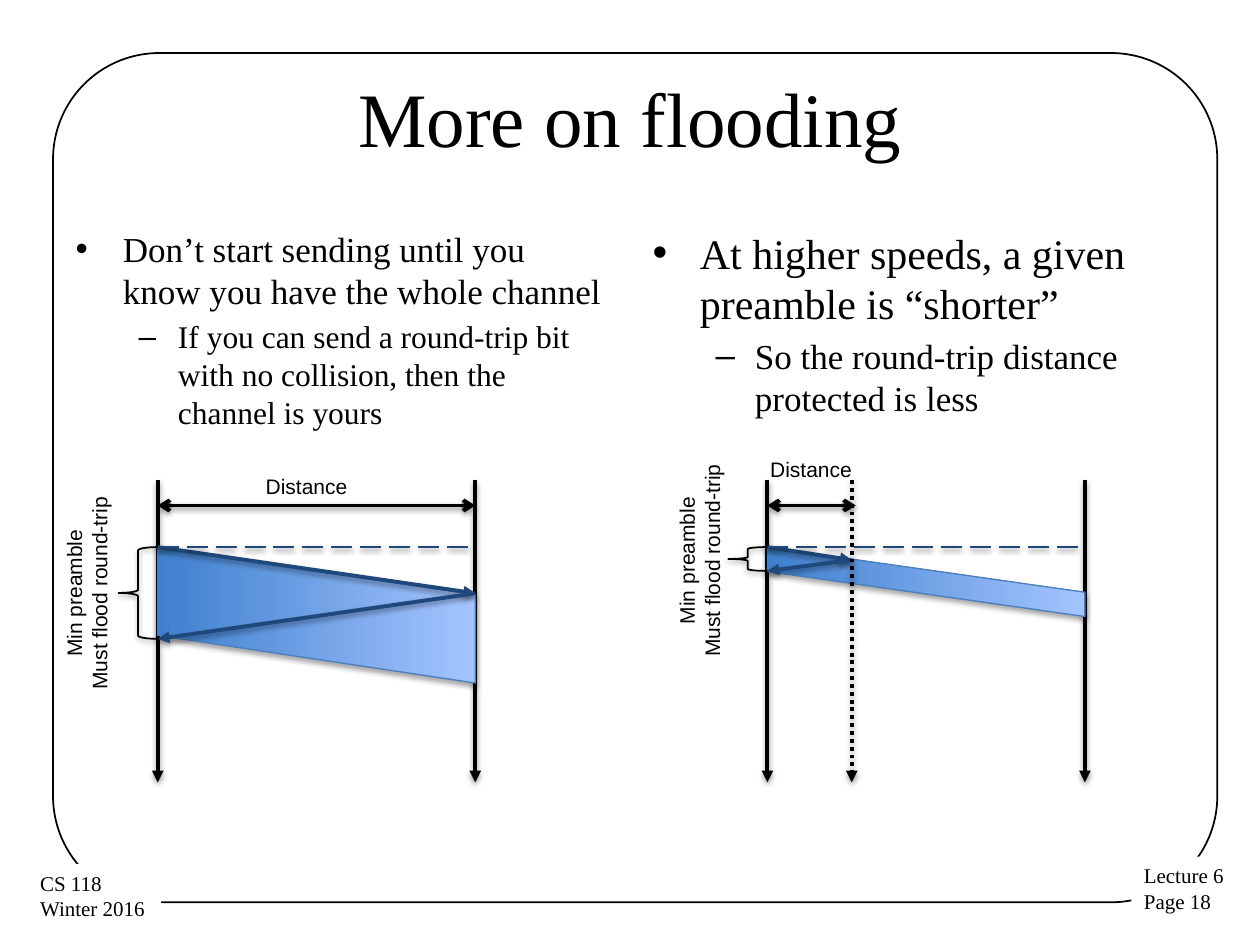
from dataclasses import dataclass
from lxml import etree
from pptx import Presentation
from pptx.dml.color import RGBColor
from pptx.enum.dml import MSO_LINE
from pptx.enum.shapes import MSO_CONNECTOR, MSO_SHAPE
from pptx.enum.text import MSO_AUTO_SIZE, PP_ALIGN
from pptx.oxml.ns import qn
from pptx.util import Cm, Pt

STRAIGHT = MSO_CONNECTOR.STRAIGHT
ROUND_RECT = MSO_SHAPE.ROUNDED_RECTANGLE
PARALLELOGRAM = MSO_SHAPE.PARALLELOGRAM
BRACE = MSO_SHAPE.LEFT_BRACE
LONG_DASH, DOTS = MSO_LINE.LONG_DASH, MSO_LINE.ROUND_DOT
LEFT, CENTER = PP_ALIGN.LEFT, PP_ALIGN.CENTER
FIXED = MSO_AUTO_SIZE.NONE

AXIS_TOP, AXIS_BOTTOM = 9.68, 15.77
SEND_Y, DISTANCE_Y = 11.03, 10.19
CHANNEL_WIDTH = 6.4


@dataclass(frozen=True)
class Theme:
    ink: RGBColor = RGBColor.from_string("000000")
    paper: RGBColor = RGBColor.from_string("FFFFFF")
    signal: RGBColor = RGBColor.from_string("1F497D")
    band_dark: RGBColor = RGBColor.from_string("3F80CE")
    band_light: RGBColor = RGBColor.from_string("A4C4FF")
    band_edge: RGBColor = RGBColor.from_string("4B7EBC")
    serif: str = "Times New Roman"
    sans: str = "Arial"
    title_size: int = 44
    label_size: int = 12
    heavy: float = 2.25
    medium: float = 1.5
    thin: float = 1
    hairline: float = 0.75


@dataclass(frozen=True)
class Flood:
    axis_x: float
    reach: float
    arrow_reach: float
    drop: float
    round_trip: float
    band_height: float
    skew: float
    distance_center: tuple
    caption_center: tuple
    limited: bool


class SlideBuilder:
    def __init__(self, slide, theme):
        self.slide = slide
        self.theme = theme

    def style(self, paragraph, size, font):
        paragraph.font.size = Pt(size)
        paragraph.font.name = font
        paragraph.font.color.rgb = self.theme.ink

    def place(self, element, left, top, width, height):
        element.left, element.top = Cm(left), Cm(top)
        element.width, element.height = Cm(width), Cm(height)

    def title(self, text, box):
        heading = self.slide.shapes.title
        self.place(heading, *box)
        heading.text_frame.text = text
        heading.text_frame.auto_size = FIXED
        self.style(heading.text_frame.paragraphs[0], self.theme.title_size, self.theme.serif)

    def bullets(self, index, items, box):
        body = self.slide.placeholders[index]
        self.place(body, *box)
        frame = body.text_frame
        frame.text = "\n".join(text for text, _ in items)
        frame.auto_size = FIXED
        for level, (paragraph, (_, size)) in enumerate(zip(frame.paragraphs, items)):
            paragraph.level = level
            self.style(paragraph, size, self.theme.serif)

    def label(self, lines, box, font, align=CENTER, rotation=0, filled=False):
        label = self.slide.shapes.add_textbox(*map(Cm, box))
        label.rotation = rotation
        if filled:
            label.fill.solid()
            label.fill.fore_color.rgb = self.theme.paper
        frame = label.text_frame
        frame.word_wrap = False
        frame.text = "\n".join(lines)
        for paragraph in frame.paragraphs:
            paragraph.alignment = align
            self.style(paragraph, self.theme.label_size, font)

    def shadow(self, properties, opacity, distance):
        effects = properties.find(qn("a:effectLst"))
        if effects is None:
            effects = etree.SubElement(properties, qn("a:effectLst"))
        outer = etree.SubElement(effects, qn("a:outerShdw"), blurRad="40000",
                                 dist=str(distance), dir="5400000", rotWithShape="0")
        black = etree.SubElement(outer, qn("a:srgbClr"), val=str(self.theme.ink))
        etree.SubElement(black, qn("a:alpha"), val=str(opacity * 1000))

    def outline(self, kind, box, color, width):
        shape = self.slide.shapes.add_shape(kind, *map(Cm, box))
        shape.shadow.inherit = False
        shape.fill.background()
        shape.line.color.rgb = color
        shape.line.width = Pt(width)
        return shape

    def border(self, box):
        self.outline(ROUND_RECT, box, self.theme.ink, self.theme.thin).adjustments[0] = 0.125

    def brace(self, box):
        brace = self.outline(BRACE, box, self.theme.ink, self.theme.thin)
        self.shadow(brace.element.spPr, 38, 20000)

    def band(self, left, top, width, height, skew):
        box = (left + (width - height) / 2, top + (height - width) / 2, height, width)
        band = self.outline(PARALLELOGRAM, box, self.theme.band_edge, self.theme.hairline)
        band.rotation = 90
        band.adjustments[0] = skew / height
        band.fill.gradient()
        band.fill.gradient_angle = 90
        for stop, color in zip(band.fill.gradient_stops,
                               (self.theme.band_dark, self.theme.band_light)):
            stop.color.rgb = color
        self.shadow(band.element.spPr, 35, 23000)

    def line(self, start, end, color, width, dash=None, head=None, tail=None):
        connector = self.slide.shapes.add_connector(STRAIGHT, *map(Cm, (*start, *end)))
        connector.line.color.rgb = color
        connector.line.width = Pt(width)
        if dash is not None:
            connector.line.dash_style = dash
        properties = connector.element.spPr
        for tag, kind in (("a:headEnd", head), ("a:tailEnd", tail)):
            if kind:
                etree.SubElement(properties.find(qn("a:ln")), qn(tag), type=kind)
        self.shadow(properties, 38, 20000)

    def axis(self, x, dash=None):
        self.line((x, AXIS_TOP), (x, AXIS_BOTTOM), self.theme.ink, self.theme.heavy,
                  dash, tail="triangle")

    def flood(self, flood):
        theme = self.theme
        near, far = flood.axis_x, flood.axis_x + CHANNEL_WIDTH
        sent, turn = (near, SEND_Y), (near + flood.reach, SEND_Y + flood.drop)
        returned = (near, SEND_Y + flood.round_trip)
        self.axis(near)
        self.axis(far)
        self.band(near, SEND_Y, CHANNEL_WIDTH, flood.band_height, flood.skew)
        self.line(sent, turn, theme.signal, theme.heavy, tail="triangle")
        self.line(sent, (far, SEND_Y), theme.signal, theme.medium, LONG_DASH)
        self.line(turn, returned, theme.signal, theme.heavy, tail="triangle")
        self.brace((near - 0.79, SEND_Y, 0.79, flood.round_trip))
        x, y = flood.caption_center
        self.label(("Min preamble", "Must flood round-trip"),
                   (x - 2.21, y - 0.64, 4.42, 1.28), theme.sans, rotation=270)
        if flood.limited:
            self.axis(near + flood.reach, DOTS)
        self.line((near, DISTANCE_Y), (near + flood.arrow_reach, DISTANCE_Y),
                  theme.ink, theme.heavy, head="arrow", tail="arrow")
        x, y = flood.distance_center
        self.label(("Distance",), (x - 1.08, y - 0.38, 2.16, 0.76), theme.sans)


def main():
    deck = Presentation()
    deck.slide_width, deck.slide_height = Cm(25.4), Cm(19.05)
    theme = Theme()
    page = SlideBuilder(deck.slides.add_slide(deck.slide_layouts[3]), theme)
    page.border((1.07, 1.07, 23.47, 17.12))
    page.label(("Lecture 6", "Page 18"), (22.81, 17.27, 2.13, 1.3), theme.serif, LEFT, filled=True)
    page.label(("CS 118", "Winter 2016"), (0.56, 17.42, 2.69, 1.3), theme.serif, LEFT, filled=True)
    page.title("More on flooding", (1.27, 0.76, 22.86, 3.18))
    page.bullets(1, (
        ("Don’t start sending until you know you have the whole channel", 20),
        ("If you can send a round-trip bit with no collision, then the channel is yours", 18),
    ), (1.27, 4.45, 11.23, 12.57))
    page.bullets(2, (
        ("At higher speeds, a given preamble is “shorter”", 24),
        ("So the round-trip distance protected is less", 20),
    ), (12.9, 4.45, 11.23, 12.57))
    page.flood(Flood(axis_x=3.18, reach=6.4, arrow_reach=6.4, drop=0.93, round_trip=1.85,
                     band_height=2.74, skew=0.96, distance_center=(6.18, 9.8),
                     caption_center=(1.75, 11.96), limited=False))
    page.flood(Flood(axis_x=15.47, reach=1.7, arrow_reach=1.78, drop=0.26, round_trip=0.48,
                     band_height=1.4, skew=0.91, distance_center=(16.35, 9.45),
                     caption_center=(14.1, 11.3), limited=True))
    deck.save("out.pptx")


if __name__ == "__main__":
    main()
